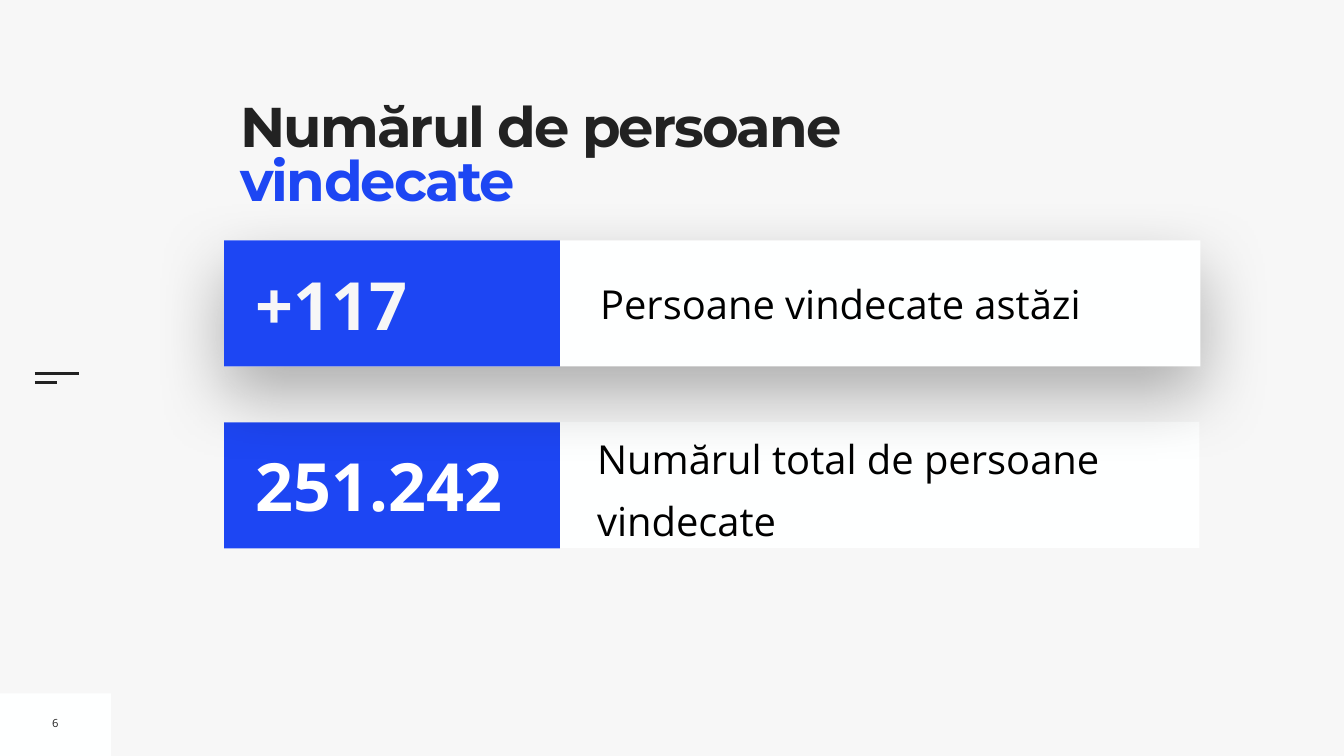
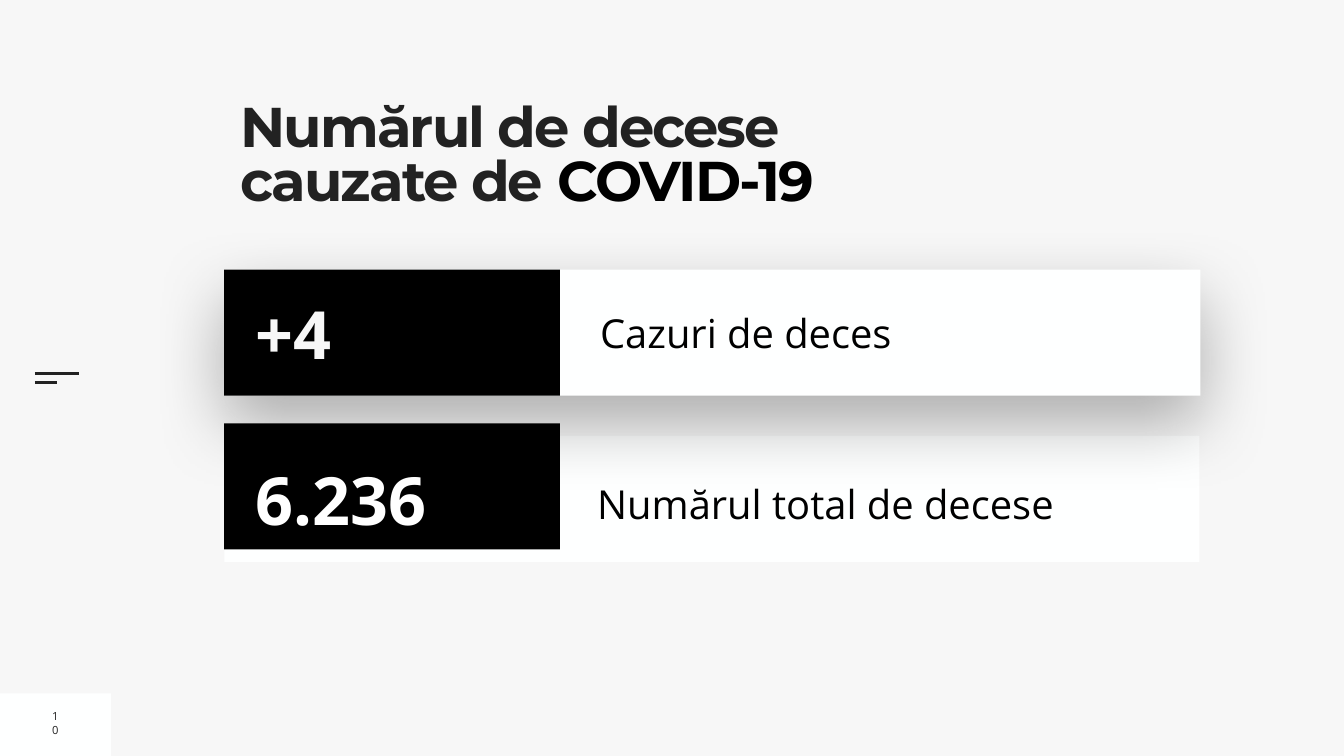
from dataclasses import dataclass

from lxml.etree import SubElement
from pptx import Presentation
from pptx.dml.color import RGBColor
from pptx.enum.shapes import MSO_CONNECTOR as Connector, MSO_SHAPE as Preset
from pptx.enum.text import MSO_ANCHOR as Anchor, MSO_AUTO_SIZE as AutoSize, PP_ALIGN as Align
from pptx.oxml.ns import qn
from pptx.util import Pt

EMU_PER_PX = 9144  # 100 px to the inch


@dataclass(frozen=True)
class Theme:
    background: str = "F7F7F7"
    plate: str = "FEFFFF"
    ink: str = "222222"
    black: str = "000000"
    white: str = "FFFFFF"
    blue: str = "1D46F3"
    heading_font: str = "Montserrat"
    body_font: str = "Open Sans"
    title_size: int = 80
    figure_size: int = 95
    caption_size: int = 57
    page_size: int = 16


@dataclass(frozen=True)
class Row:
    """One statistic; the offsets are measured from the top of its plate."""
    top: int
    figure: str
    caption: str
    figure_color: str
    width: int = 1935
    badge_dy: int = 0
    figure_dy: int = 35
    caption_box: tuple = (736, 67, 1176, 116)
    caption_inset: int = 10
    spaced: bool = False
    raised: bool = False


THEME = Theme()
ROW_LEFT, ROW_HEIGHT, BADGE_WIDTH = 445, 250, 666


def px(*lengths):
    return [length * EMU_PER_PX for length in lengths]


def rgb(color):
    return RGBColor.from_string(color)


def style_run(run, font, size, color, bold=False):
    run.font.name, run.font.size, run.font.bold = font, Pt(size), bold
    run.font.color.rgb = rgb(color)


def set_insets(frame, inset):
    (margin,) = px(inset)
    frame.margin_left = frame.margin_right = margin
    frame.margin_top = frame.margin_bottom = margin


def add_panel(shapes, box, color):
    panel = shapes.add_shape(Preset.RECTANGLE, *px(*box))
    panel.shadow.inherit = False
    panel.fill.solid()
    panel.fill.fore_color.rgb = rgb(color)
    panel.line.fill.background()
    return panel


def add_label(shapes, box, text, size, color, bold=False, inset=10):
    frame = shapes.add_textbox(*px(*box)).text_frame
    frame.word_wrap = True
    frame.auto_size = AutoSize.SHAPE_TO_FIT_TEXT
    frame.vertical_anchor = Anchor.MIDDLE
    set_insets(frame, inset)
    frame.text = text
    paragraph = frame.paragraphs[0]
    style_run(paragraph.runs[0], THEME.body_font, size, color, bold)
    return paragraph


def cast_shadow(panel):
    effects = panel.element.spPr.find(qn("a:effectLst"))
    shadow = SubElement(effects, qn("a:outerShdw"), blurRad=str(Pt(100)),
                        dist=str(Pt(40)), dir="5400000", rotWithShape="0")
    color = SubElement(shadow, qn("a:srgbClr"), val=THEME.black)
    SubElement(color, qn("a:alpha"), val="30000")


def add_dash(shapes, left, top, width):
    dash = shapes.add_connector(Connector.STRAIGHT, *px(left, top, left + width, top))
    dash.line.color.rgb = rgb(THEME.ink)
    dash.line.width = Pt(3)
    SubElement(dash.element.spPr, qn("a:effectLst"))
    return dash


def dress_layout(layout, slide):
    """Give the layout its background, footer plate, menu mark and title box."""
    layout.background.fill.solid()
    layout.background.fill.fore_color.rgb = rgb(THEME.background)
    shared = [add_panel(slide.shapes, (0, 1376, 220, 124), THEME.plate),
              add_dash(slide.shapes, 69, 741, 88),
              add_dash(slide.shapes, 69, 759, 44)]
    for part in shared:
        layout.shapes.element.append(part.element)
    title = layout.placeholders[0]
    title.left, title.top, title.width, title.height = px(477, 207, 1301, 273)


def write_title(slide, lead, emphasis, accent):
    frame = slide.shapes.title.text_frame
    frame.word_wrap = True
    frame.auto_size = AutoSize.NONE
    frame.vertical_anchor = Anchor.TOP
    set_insets(frame, 0)
    paragraph = frame.paragraphs[0]
    paragraph.alignment = Align.LEFT
    paragraph.line_spacing = 0.8
    for text, color in ((lead, THEME.ink), (emphasis, accent)):
        run = paragraph.add_run()
        run.text = text
        style_run(run, THEME.heading_font, THEME.title_size, color, bold=True)
        run.font._element.set("spc", "-270")


def add_page_number(slide, number):
    page = add_label(slide.shapes, (93, 1409, 34, 51), number, THEME.page_size, THEME.ink)
    page.alignment = Align.CENTER


def add_row(slide, row, accent):
    shapes = slide.shapes.add_group_shape().shapes
    plate = add_panel(shapes, (ROW_LEFT, row.top, row.width, ROW_HEIGHT), THEME.plate)
    if row.raised:
        cast_shadow(plate)

    # Caption to the right of the badge
    dx, dy, width, height = row.caption_box
    caption = add_label(shapes, (ROW_LEFT + dx, row.top + dy, width, height), row.caption,
                        THEME.caption_size, THEME.black, inset=row.caption_inset)
    if row.spaced:
        caption.line_spacing = 1.3
        caption.space_before = Pt(20)

    # Badge with the figure
    add_panel(shapes, (ROW_LEFT, row.top + row.badge_dy, BADGE_WIDTH, ROW_HEIGHT), accent)
    add_label(shapes, (ROW_LEFT + 53, row.top + row.figure_dy, 603, 180), row.figure,
              THEME.figure_size, row.figure_color, bold=True)


def daily_row(top, figure, caption):
    return Row(top, figure, caption, THEME.background, width=1937, raised=True)


def total_row(top, figure, caption, **offsets):
    return Row(top, figure, caption, THEME.white, caption_inset=0, spaced=True, **offsets)


def fill_slide(slide, page, lead, emphasis, accent, rows):
    write_title(slide, lead, emphasis, accent)
    add_page_number(slide, page)
    for row in rows:
        add_row(slide, row, accent)


def main():
    deck = Presentation()
    deck.slide_width, deck.slide_height = px(2667, 1500)
    layout = deck.slide_layouts[5]
    recovered, deaths = (deck.slides.add_slide(layout) for _ in range(2))
    dress_layout(layout, recovered)

    fill_slide(recovered, "6", "Numărul de persoane ", "vindecate", THEME.blue, [
        total_row(837, "251.242", "Numărul total de persoane vindecate",
                  badge_dy=1, figure_dy=36, caption_box=(740, 2, 1195, 236)),
        daily_row(477, "+117", "Persoane vindecate astăzi"),
    ])
    fill_slide(deaths, "10", "Numărul de decese cauzate de ", "COVID-19", THEME.black, [
        total_row(865, "6.236", "Numărul total de decese",
                  badge_dy=-25, caption_box=(740, 64, 1158, 112)),
        daily_row(535, "+4", "Cazuri de deces"),
    ])
    deck.save("out.pptx")


if __name__ == "__main__":
    main()
